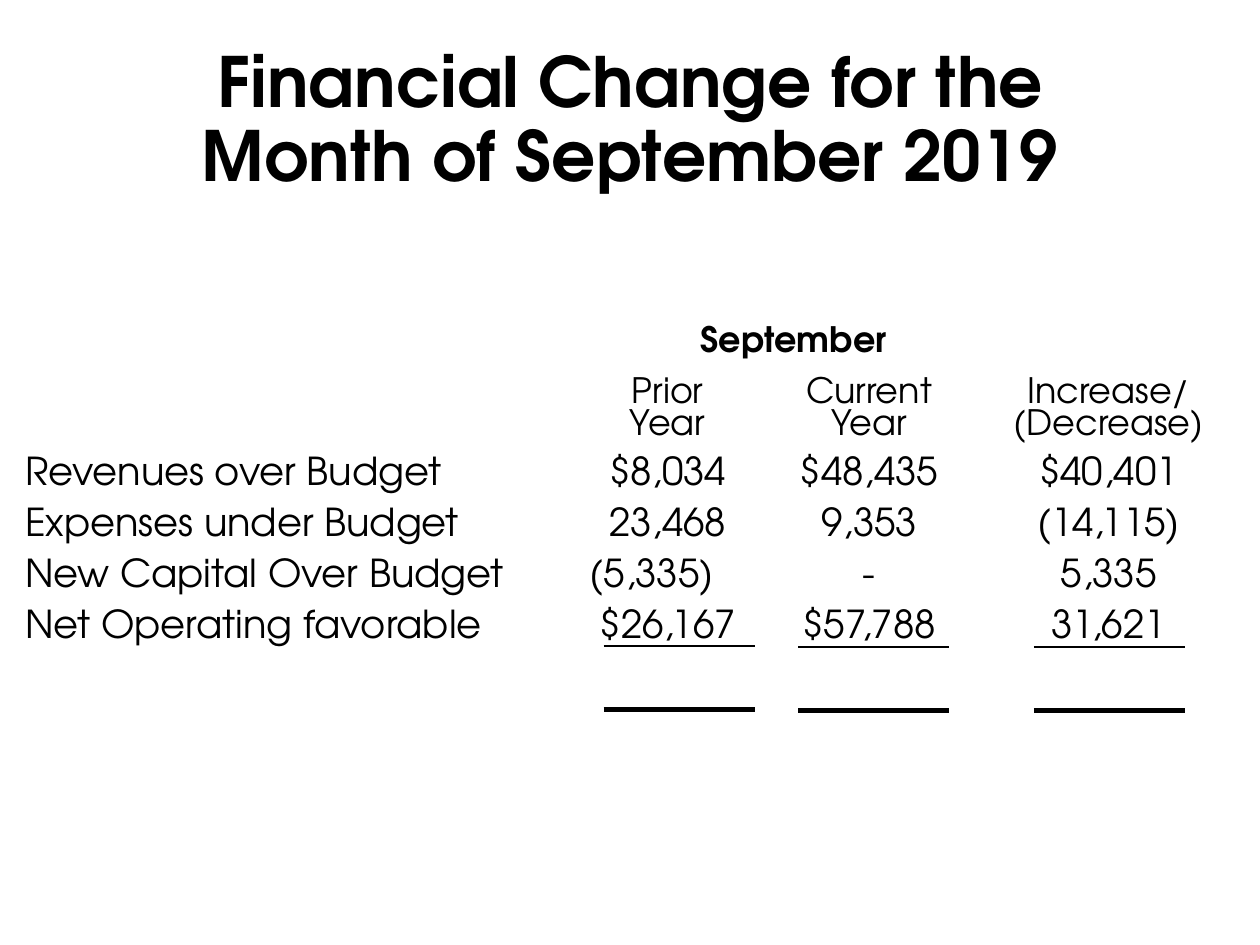
"""Build the September 2019 financial change slide."""
from lxml.etree import SubElement
from pptx import Presentation
from pptx.dml.color import RGBColor
from pptx.enum.shapes import MSO_CONNECTOR
from pptx.enum.text import MSO_ANCHOR, PP_ALIGN
from pptx.oxml.ns import qn
from pptx.util import Cm, Pt

FONT = "TeX Gyre Adventor"
COLORS = {"ink": "000000", "paper": "FFFFFF"}


def style(para, size, bold, align, space):
    para.font.name = FONT
    para.font.size = Pt(size)
    para.font.bold = bold
    para.font.color.rgb = RGBColor.from_string(COLORS["ink"])
    para.alignment = align
    para.line_spacing = space


deck = Presentation()
deck.slide_width, deck.slide_height = Cm(25.4), Cm(19.05)
slide = deck.slides.add_slide(deck.slide_layouts[5])

title = slide.shapes.title
title.left, title.top, title.width, title.height = Cm(2.29), Cm(0.89), Cm(20.83), Cm(5.08)
frame = title.text_frame
frame.text = "Financial Change for the\vMonth of September 2019"
frame.vertical_anchor = MSO_ANCHOR.TOP
frame.margin_top = Cm(0.06)
style(frame.paragraphs[0], 39.6, True, PP_ALIGN.CENTER, 0.9)

rows = [
    ["", "September", "", ""],
    ["", "Prior\nYear", "Current Year", "Increase/ (Decrease)"],
    ["Revenues over Budget", "$8,034", "$48,435", "$40,401"],
    ["Expenses under Budget", "23,468", "9,353", "(14,115)"],
    ["New Capital Over Budget", "(5,335)", "-", "5,335"],
    ["Net Operating favorable", "$26,167", "$57,788", "31,621"],
    ["", "", "", ""],
]
widths = [11.18, 4.06, 4.06, 1.02, 2.29, 2.29]
heights = [1.03, 1.6] + [1.03] * 5
table = slide.shapes.add_table(
    len(rows), len(widths), Cm(0.25), Cm(6.45), Cm(sum(widths)), Cm(sum(heights))
).table
for col, width in zip(table.columns, widths):
    col.width = Cm(width)
for row, height in zip(table.rows, heights):
    row.height = Cm(height)

table.cell(0, 1).merge(table.cell(0, 3))
for r in range(1, len(rows)):
    table.cell(r, 3).merge(table.cell(r, 5))

for r, texts in enumerate(rows):
    for c in range(len(widths)):
        cell = table.cell(r, c)
        cell.fill.solid()
        cell.fill.fore_color.rgb = RGBColor.from_string(COLORS["paper"])
        if c < len(texts):
            cell.text = texts[c]
        for para in cell.text_frame.paragraphs:
            align = PP_ALIGN.CENTER if c else PP_ALIGN.LEFT
            style(para, 20 if r < 2 else 22, r == 0, align, 1.0)
table.cell(4, 1).margin_right = Cm(0.9)

for left, drop in [(12.17, 0), (16.09, 0.02), (20.84, 0.02)]:
    for top, weight in [(13.03, 1.25), (14.3, 3)]:
        y = Cm(top + drop)
        rule = slide.shapes.add_connector(
            MSO_CONNECTOR.STRAIGHT, Cm(left), y, Cm(left + 3.05), y
        )
        rule.line.color.rgb = RGBColor.from_string(COLORS["ink"])
        rule.line.width = Pt(weight)
        SubElement(rule._element.spPr, qn("a:effectLst"))

deck.save("out.pptx")
